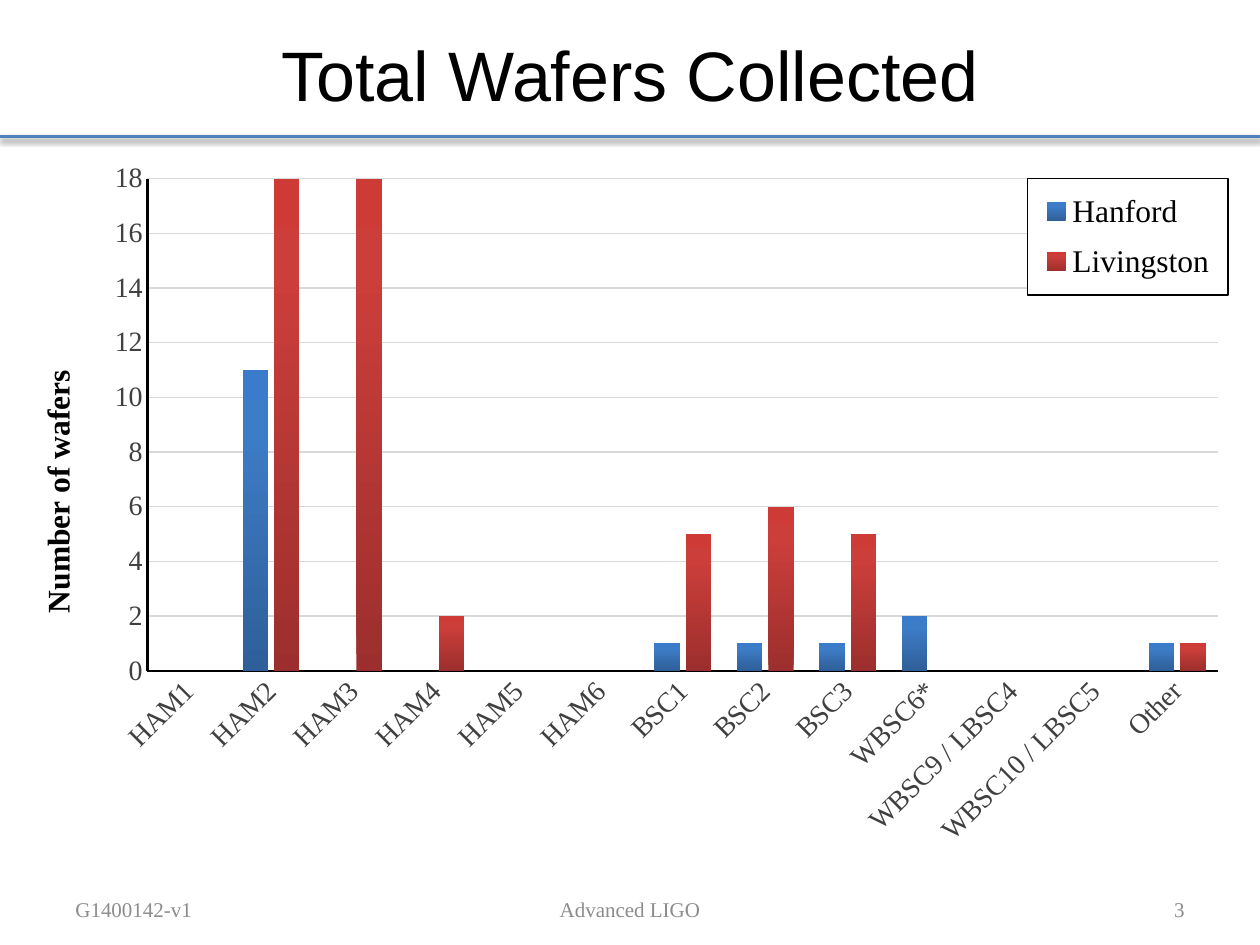
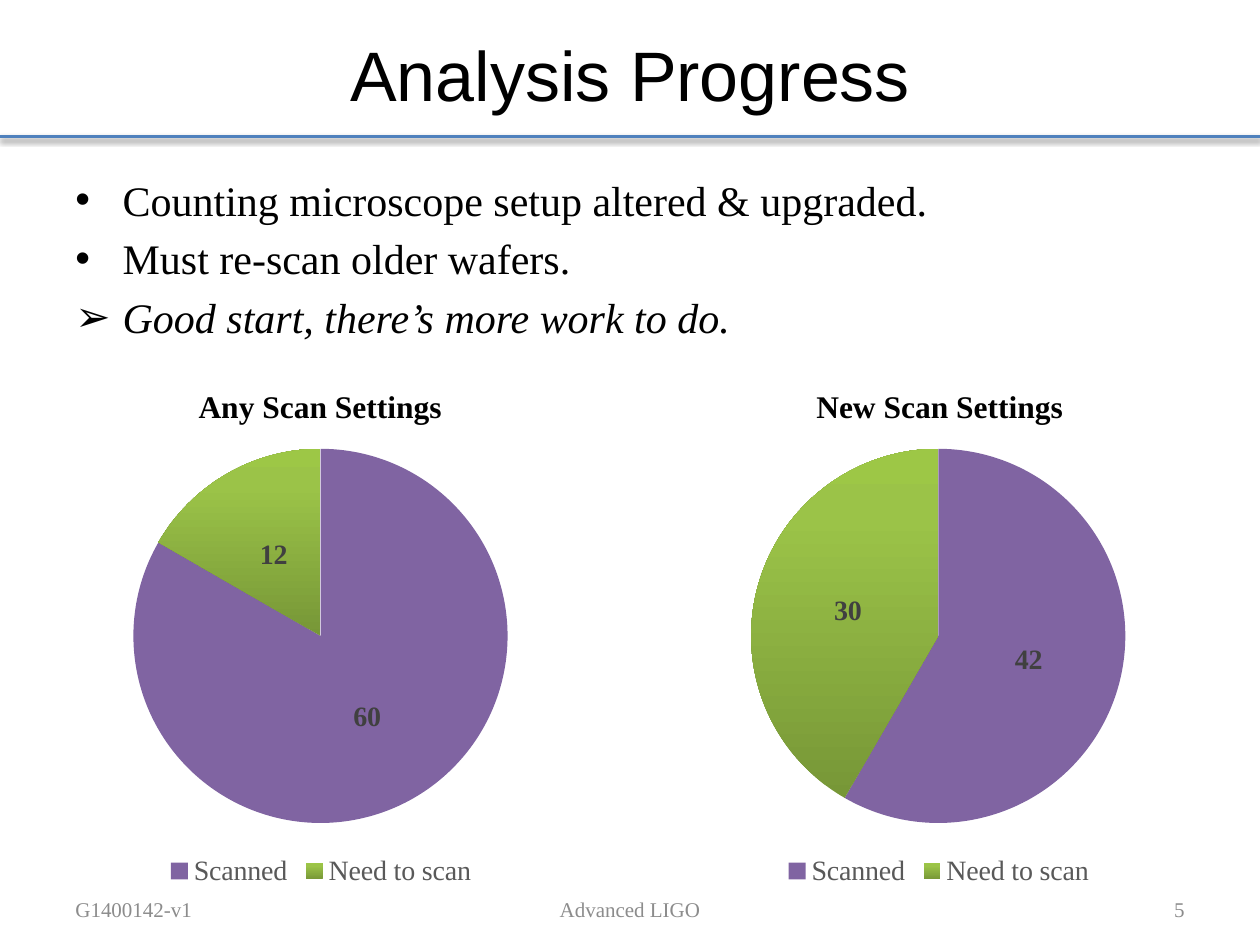
from copy import deepcopy
from dataclasses import dataclass

from pptx import Presentation
from pptx import util as u
from pptx.chart.data import CategoryChartData
from pptx.dml.color import RGBColor
from pptx.enum import chart as charts, shapes, text
from pptx.oxml import parse_xml
from pptx.oxml.ns import nsdecls

Pt = u.Pt


@dataclass(frozen=True)
class Theme:
    heading: str = "Arial"
    body: str = "Times New Roman"
    black: str = "000000"
    rule: str = "4F81BD"
    footer: str = "8C8C8C"
    label: str = "404040"
    legend: str = "595959"
    grid: str = "D9D9D9"
    scanned: str = "8064A2"
    blue: tuple = ("2F5F99", "3D7CC7", "3A7CCB")
    red: tuple = ("9C2F2D", "CB3E3A", "CE3B37")
    green: tuple = ("779737", "9BC348", "9DC746")
    title_size: int = 40
    body_size: int = 24
    caption_size: int = 18
    label_size: int = 16
    footer_size: int = 12


theme = Theme()


def write(paragraph, content, font=theme.body, size=theme.body_size, color=theme.black,
          bold=False, italic=False, align=None, bullet=None, space_before=None):
    if bullet:
        properties = paragraph._p.get_or_add_pPr()
        properties.set("marL", str(Pt(27)))
        properties.set("indent", str(-Pt(27)))
        properties.append(parse_xml(f'<a:buFont {nsdecls("a")} typeface="{theme.heading}"/>'))
        properties.append(parse_xml(f'<a:buChar {nsdecls("a")} char="{bullet}"/>'))
    if align is not None:
        paragraph.alignment = align
    if space_before:
        paragraph.space_before = Pt(space_before)
    run = paragraph.add_run()
    run.text = content
    run.font.name, run.font.size = font, Pt(size)
    run.font.bold, run.font.italic = bold, italic
    run.font.color.rgb = RGBColor.from_string(color)


def place_chart_part(part, x, y, size=None, after=None, inner=False):
    """Give a chart part a manual layout, in percent of the chart, after the named child."""
    for old_layout in part.xpath("c:layout"):
        part.remove(old_layout)
    target = '<c:layoutTarget val="inner"/>' if inner else ""
    extent = f'<c:w val="{size[0] / 100}"/><c:h val="{size[1] / 100}"/>' if size else ""
    layout = parse_xml(
        f'<c:layout {nsdecls("c")}><c:manualLayout>{target}'
        f'<c:xMode val="edge"/><c:yMode val="edge"/>'
        f'<c:x val="{x / 100}"/><c:y val="{y / 100}"/>{extent}</c:manualLayout></c:layout>')
    if after:
        part.xpath(after)[0].addnext(layout)
    else:
        part.insert(0, layout)


presentation = Presentation()
presentation.slide_width, presentation.slide_height = Pt(720), Pt(540)

# Title, rule and footers
slides = []
for heading, number in (("Total Wafers Collected", "3"), ("Analysis Progress", "5")):
    slide = presentation.slides.add_slide(presentation.slide_layouts[5])
    slides.append(slide)

    rule = slide.shapes.add_connector(
        shapes.MSO_CONNECTOR.STRAIGHT, Pt(0), Pt(78), Pt(720), Pt(78))
    rule.line.color.rgb = RGBColor.from_string(theme.rule)
    rule.line.width = Pt(2)
    rule._element.spPr.append(parse_xml(
        f'<a:effectLst {nsdecls("a")}><a:outerShdw blurRad="{Pt(3.1)}" dist="{Pt(1.6)}" '
        f'dir="5400000" rotWithShape="0"><a:srgbClr val="{theme.black}">'
        f'<a:alpha val="38000"/></a:srgbClr></a:outerShdw></a:effectLst>'))

    title = slide.shapes.title
    title.left, title.top, title.width, title.height = Pt(36), Pt(6), Pt(648), Pt(72)
    title.text_frame.auto_size = text.MSO_AUTO_SIZE.NONE
    title.text_frame.vertical_anchor = text.MSO_ANCHOR.MIDDLE
    write(title.text_frame.paragraphs[0], heading, font=theme.heading,
          size=theme.title_size, align=text.PP_ALIGN.CENTER)

    for content, left, width, align in (
            ("G1400142-v1", 36, 168, text.PP_ALIGN.LEFT),
            ("Advanced LIGO", 246, 228, text.PP_ALIGN.CENTER),
            (number, 516, 168, text.PP_ALIGN.RIGHT)):
        footer = slide.shapes.add_textbox(Pt(left), Pt(505), Pt(width), Pt(28.75))
        footer.text_frame.word_wrap = True
        footer.text_frame.vertical_anchor = text.MSO_ANCHOR.MIDDLE
        write(footer.text_frame.paragraphs[0], content, size=theme.footer_size,
              color=theme.footer, align=align)

wafer_slide, progress_slide = slides
gradients = []

# Wafer counts
wafer_data = CategoryChartData()
wafer_data.categories = [
    "HAM1", "HAM2", "HAM3", "HAM4", "HAM5", "HAM6", "BSC1", "BSC2", "BSC3",
    "WBSC6*", "WBSC9 / LBSC4", "WBSC10 / LBSC5", "Other"]
wafer_data.add_series("Hanford", (0, 11, 0, 0, 0, 0, 1, 1, 1, 2, 0, 0, 1))
wafer_data.add_series("Livingston", (0, 18, 18, 2, 0, 0, 5, 6, 5, 0, 0, 0, 1))
wafer_chart = wafer_slide.shapes.add_chart(
    charts.XL_CHART_TYPE.COLUMN_CLUSTERED, Pt(18), Pt(90), Pt(690), Pt(415.5), wafer_data).chart
wafer_chart.has_title = False
wafer_chart.font.name, wafer_chart.font.size = theme.body, Pt(theme.label_size)

columns = wafer_chart.plots[0]
columns.gap_width, columns.overlap, columns.vary_by_categories = 100, -24, False
for series, colors in zip(columns.series, (theme.blue, theme.red)):
    gradients.append((series.format.fill, series, colors))

value_axis, category_axis = wafer_chart.value_axis, wafer_chart.category_axis
for axis in (value_axis, category_axis):
    axis.major_tick_mark = axis.minor_tick_mark = charts.XL_TICK_MARK.NONE
    axis.format.line.color.rgb = RGBColor.from_string(theme.black)
    axis.format.line.width = Pt(1.25)
    font = axis.tick_labels.font
    font.name, font.size = theme.body, Pt(theme.label_size)
    font.color.rgb = RGBColor.from_string(theme.label)
category_axis._element.xpath("c:txPr/a:bodyPr")[0].set("rot", "-2700000")
value_axis.minimum_scale, value_axis.maximum_scale, value_axis.major_unit = 0, 18, 2
value_axis.has_major_gridlines = True
gridline = value_axis.major_gridlines.format.line
gridline.color.rgb = RGBColor.from_string(theme.grid)
gridline.width = Pt(0.75)

axis_title = value_axis.axis_title
write(axis_title.text_frame.paragraphs[0], "Number of wafers",
      size=theme.caption_size, bold=True)
axis_title._element.xpath(".//a:bodyPr")[0].set("rot", "-5400000")
place_chart_part(axis_title._element, 0.1, 28.45, after="c:tx")
place_chart_part(wafer_chart._chartSpace.chart.plotArea, 9.6, 2.9, (88.7, 67.7), inner=True)

wafer_chart.has_legend = True
legend = wafer_chart.legend
legend.position = charts.XL_LEGEND_POSITION.CORNER
legend.include_in_layout = True
legend.font.name, legend.font.size = theme.body, Pt(theme.caption_size)
legend.font.color.rgb = RGBColor.from_string(theme.black)
place_chart_part(legend._element, 82.5, 2.9, (16.6, 16), after="c:legendPos")
legend._element.xpath("c:overlay")[0].addnext(parse_xml(
    f'<c:spPr {nsdecls("c", "a")}><a:solidFill><a:srgbClr val="FFFFFF"/></a:solidFill>'
    f'<a:ln w="{Pt(0.75)}"><a:solidFill><a:srgbClr val="{theme.black}"/></a:solidFill></a:ln>'
    f'</c:spPr>'))

# Progress notes
notes = progress_slide.shapes.add_textbox(Pt(36), Pt(96), Pt(648), Pt(110))
notes.text_frame.word_wrap = True
for index, (content, bullet, italic) in enumerate((
        ("Counting microscope setup altered & upgraded.", "•", False),
        ("Must re-scan older wafers.", "•", False),
        ("Good start, there’s more work to do.", "➢", True))):
    paragraph = notes.text_frame.add_paragraph() if index else notes.text_frame.paragraphs[0]
    write(paragraph, content, bullet=bullet, italic=italic, space_before=4.7 if index else None)

# Scan progress
for left, heading, counts in (
        (13.5, "Any Scan Settings", (60, 12)),
        (366.5, "New Scan Settings", (42, 30))):
    scan_data = CategoryChartData()
    scan_data.categories = ["Scanned", "Need to scan"]
    scan_data.add_series("Series 1", counts)
    scan_chart = progress_slide.shapes.add_chart(
        charts.XL_CHART_TYPE.PIE, Pt(left), Pt(210), Pt(340), Pt(300), scan_data).chart
    scan_chart.font.name, scan_chart.font.size = theme.body, Pt(10)

    scan_chart.has_title = True
    write(scan_chart.chart_title.text_frame.paragraphs[0], heading,
          size=theme.caption_size, bold=True)
    place_chart_part(scan_chart.chart_title._element, 28.45, 2.65, after="c:tx")
    place_chart_part(scan_chart._chartSpace.chart.plotArea, 18.4, 15.5, (63, 71.3), inner=True)

    scan_chart.has_legend = True
    legend = scan_chart.legend
    legend.position = charts.XL_LEGEND_POSITION.BOTTOM
    legend.include_in_layout = False
    legend.font.name, legend.font.size = theme.body, Pt(theme.label_size)
    legend.font.color.rgb = RGBColor.from_string(theme.legend)

    pie = scan_chart.plots[0]
    pie.vary_by_categories = True
    series = pie.series[0]
    scanned_fill = series.points[0].format.fill
    scanned_fill.solid()
    scanned_fill.fore_color.rgb = RGBColor.from_string(theme.scanned)
    gradients.append((series.points[1].format.fill, series, theme.green))

    pie.has_data_labels = True
    labels = pie.data_labels
    labels.show_value, labels.show_percentage = True, False
    labels.position = charts.XL_LABEL_POSITION.CENTER
    labels.font.name, labels.font.size, labels.font.bold = theme.body, Pt(theme.label_size), True
    labels.font.color.rgb = RGBColor.from_string(theme.label)

# Three-stop gradients, dark at the bottom
for fill, series, colors in gradients:
    fill.gradient()
    fill.gradient_angle = 90
    stop_list = series._element.xpath(".//a:gsLst")[0]
    stop_list.insert(1, deepcopy(stop_list[0]))
    for stop, position, color in zip(fill.gradient_stops, (0, 0.8, 1), colors):
        stop.position = position
        stop.color.rgb = RGBColor.from_string(color)

presentation.save("out.pptx")
